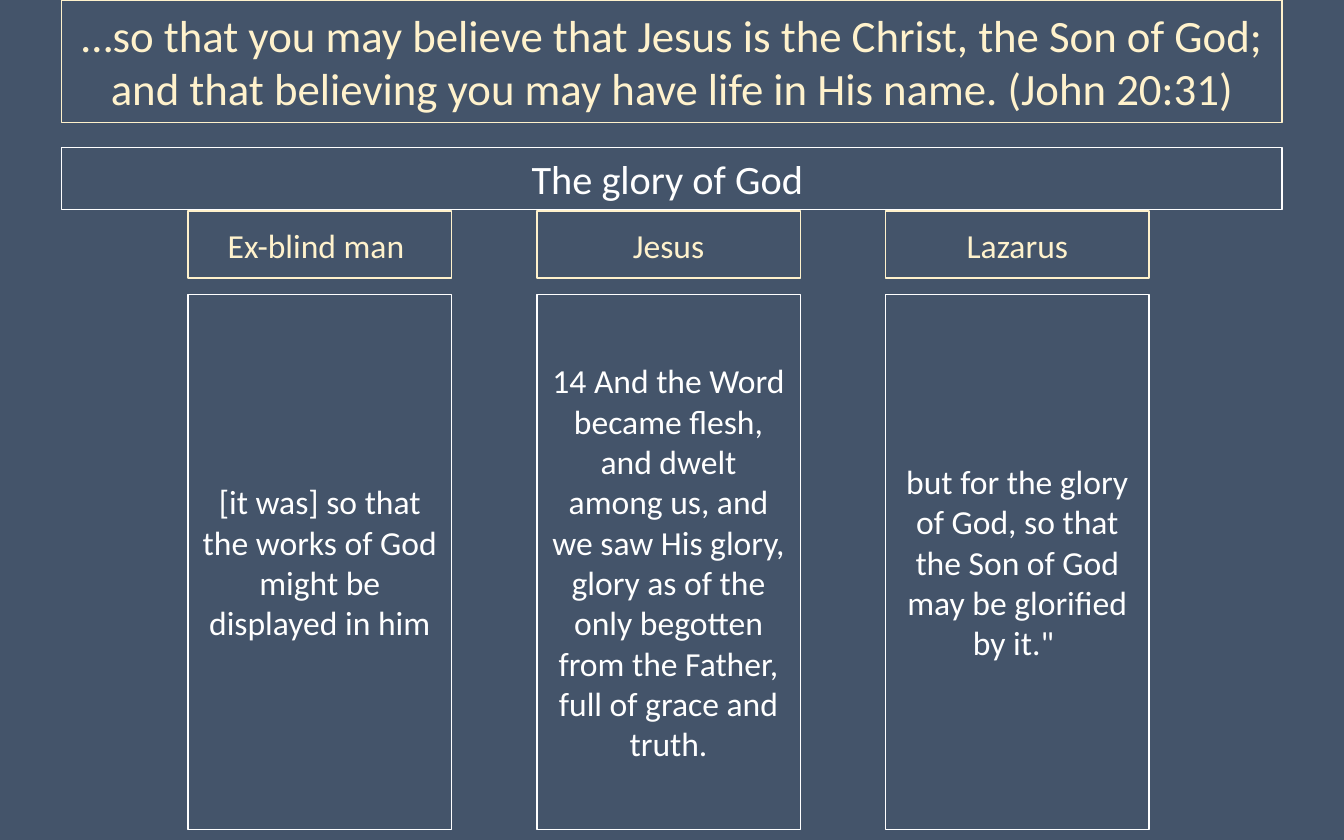
from dataclasses import dataclass

from pptx import Presentation
from pptx.dml.color import RGBColor
from pptx.enum.shapes import MSO_SHAPE
from pptx.enum.text import MSO_ANCHOR, PP_ALIGN
from pptx.util import Inches, Pt

W, H = 10, 6.25
SLATE, CREAM, WHITE = "44546A", "FFF2CC", "FFFFFF"
BAR_LEFT, BAR_WIDTH = 0.046 * W, 0.908 * W
COL_LEFT, COL_WIDTH, COL_STEP = 0.14 * W, 0.196 * W, 0.2595 * W


@dataclass
class Row:
    top: float
    height: float
    size: float
    color: str


@dataclass
class Witness:
    name: str
    verse: str


VERSE_BAR = Row(0, 0.91, 24, CREAM)
GLORY_BAR = Row(1.1, 0.46, 21.6, WHITE)
NAME_ROW = Row(1.57, 0.5, 18, CREAM)
QUOTE_ROW = Row(2.19, 3.98, 18, WHITE)

WITNESSES = [
    Witness("Ex-blind man ",
            "[it was] so that the works of God might be displayed in him"),
    Witness("Jesus",
            "14 And the Word became flesh, and dwelt among us, and we saw "
            "His glory, glory as of the only begotten from the Father, "
            "full of grace and truth."),
    Witness("Lazarus",
            "but for the glory of God, so that the Son of God may be "
            'glorified by it." '),
]


def rgb(color: str) -> RGBColor:
    return RGBColor.from_string(color)


def add_box(s, text: str, row: Row, left: float, width: float,
            anchor=MSO_ANCHOR.MIDDLE) -> None:
    sp = s.shapes.add_shape(MSO_SHAPE.RECTANGLE, Inches(left), Inches(row.top),
                            Inches(width), Inches(row.height))
    sp.shadow.inherit = False
    sp.fill.background()
    sp.line.color.rgb = rgb(row.color)
    sp.line.width = Pt(0.75)
    tf = sp.text_frame
    tf.word_wrap = True
    tf.vertical_anchor = anchor
    p = tf.paragraphs[0]
    p.text = text
    p.alignment = PP_ALIGN.CENTER
    p.font.name = "Calibri"
    p.font.size = Pt(row.size)
    p.font.color.rgb = rgb(row.color)


def main() -> None:
    """Build the slide on the glory of God and its three witnesses."""
    prs = Presentation()
    prs.slide_width, prs.slide_height = Inches(W), Inches(H)
    s = prs.slides.add_slide(prs.slide_layouts[6])
    s.background.fill.solid()
    s.background.fill.fore_color.rgb = rgb(SLATE)

    add_box(s, "…so that you may believe that Jesus is the Christ, the Son of "
            "God; and that believing you may have life in His name. "
            "(John 20:31)", VERSE_BAR, BAR_LEFT, BAR_WIDTH)
    add_box(s, "The glory of God ", GLORY_BAR, BAR_LEFT, BAR_WIDTH,
            MSO_ANCHOR.TOP)
    for i, witness in enumerate(WITNESSES):
        left = COL_LEFT + i * COL_STEP
        add_box(s, witness.name, NAME_ROW, left, COL_WIDTH)
        add_box(s, witness.verse, QUOTE_ROW, left, COL_WIDTH)

    prs.save("out.pptx")


if __name__ == "__main__":
    main()
